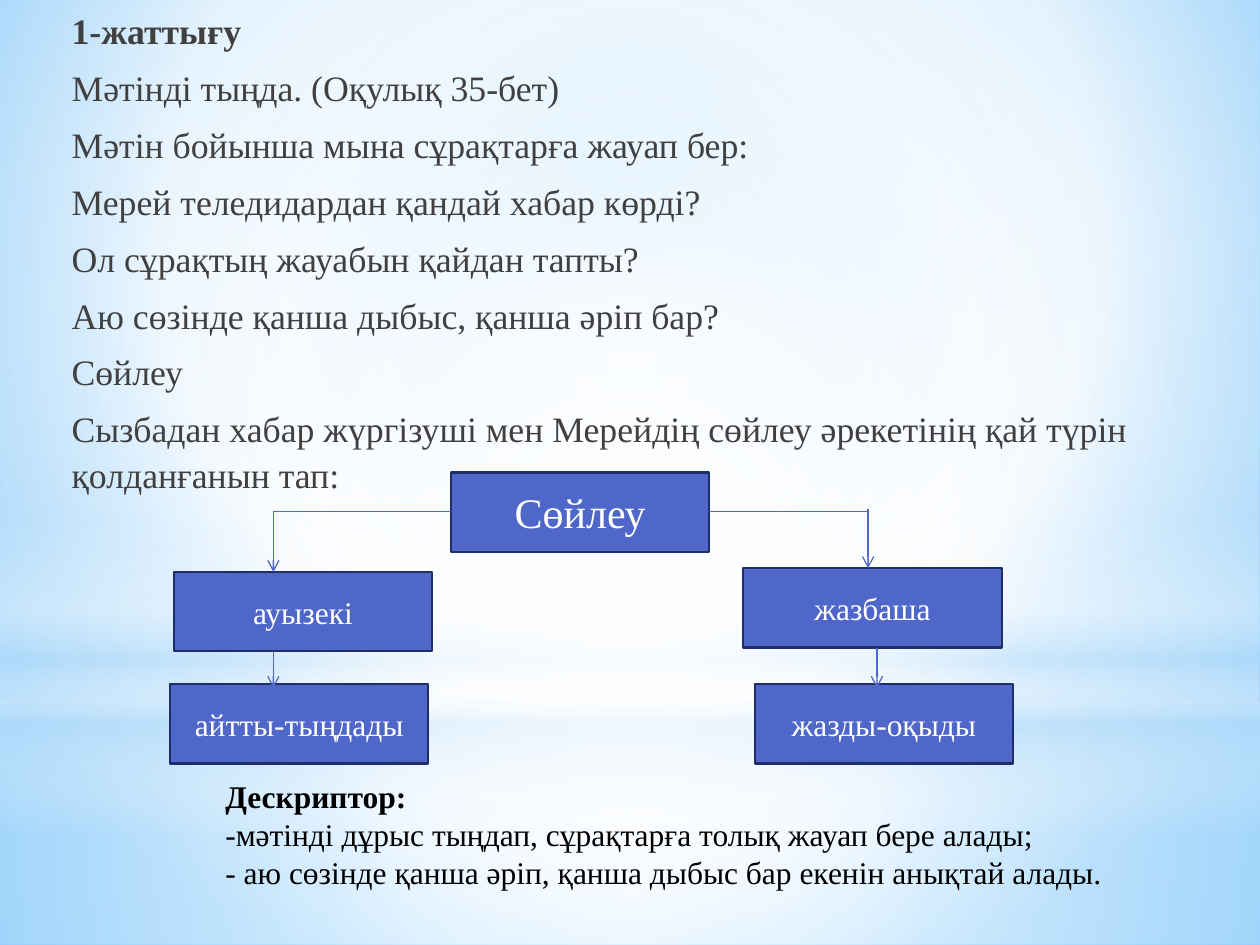
from lxml import etree
from pptx import Presentation
from pptx import util as u
from pptx.dml.color import RGBColor
from pptx.enum import shapes, text
from pptx.oxml import ns

FONT = "Times New Roman"
BLUE, NAVY = "4E67C8", "1F2E69"
BOX_W, BOX_H = 2.05, 0.63

TASKS = [
    "1-жаттығу",
    "Мәтінді тыңда. (Оқулық 35-бет)",
    "Мәтін бойынша мына сұрақтарға жауап бер:",
    "Мерей теледидардан қандай хабар көрді?",
    "Ол сұрақтың жауабын қайдан тапты?",
    "Аю сөзінде қанша дыбыс, қанша әріп бар?",
    "Сөйлеу",
    "Сызбадан хабар жүргізуші мен Мерейдің сөйлеу әрекетінің қай түрін қолданғанын тап:",
]
DESCRIPTOR = [
    "Дескриптор:",
    "-мәтінді дұрыс тыңдап, сұрақтарға толық жауап бере алады;",
    "- аю сөзінде қанша әріп, қанша дыбыс бар екенін анықтай алады.",
]


def color(value):
    return RGBColor.from_string(value)


def sub(parent, tag, **attrs):
    el = etree.SubElement(parent, ns.qn(tag))
    for key, value in attrs.items():
        el.set(key, str(value))
    return el


def set_gradient(owner, stops, center=None):
    solid = owner.find(".//" + ns.qn("a:solidFill"))
    grad = etree.Element(ns.qn("a:gradFill"), rotWithShape="1")
    stop_list = sub(grad, "a:gsLst")
    for pos, value, alpha in stops:
        stop = sub(stop_list, "a:gs", pos=pos * 1000)
        clr = sub(stop, "a:srgbClr", val=value)
        if alpha < 100:
            sub(clr, "a:alpha", val=alpha * 1000)
    if center:
        circle = sub(grad, "a:path", path="circle")
        sub(circle, "a:fillToRect", **{k: v * 1000 for k, v in zip("ltrb", center)})
    else:
        sub(grad, "a:lin", ang=5400000, scaled=0)
    solid.getparent().replace(solid, grad)


def add_glow(s, kind, y, h, stops, center=None):
    sp = s.shapes.add_shape(kind, 0, u.Inches(y), u.Inches(10), u.Inches(h))
    sp.shadow.inherit = False
    sp.line.fill.background()
    sp.fill.solid()
    set_gradient(sp._element.spPr, stops, center)


def add_backdrop(s):
    s.background.fill.solid()
    set_gradient(s.background._cSld, [(0, "9ED5FF", 100), (60, "FFFFFF", 100), (100, "5BB9FF", 100)],
                 (20, 10, 20, 60))
    rect, oval = shapes.MSO_SHAPE.RECTANGLE, shapes.MSO_SHAPE.OVAL
    middle = (50, 50, 50, 50)
    add_glow(s, rect, 5.58, 1.92, [(0, "FFFFFF", 91), (37, "FFFFFF", 76), (100, "B4DCFA", 79)], middle)
    add_glow(s, rect, 0, 5.58, [(0, "FFFFFF", 89), (48, "FFFFFF", 62), (100, "B4DCFA", 79)], middle)
    add_glow(s, rect, 4.12, 2.5, [(0, "FFFFFF", 0), (29, "FFFFFF", 30), (45, "B4DCFA", 40),
                                  (55, "FFFFFF", 26), (65, "B4DCFA", 60), (100, "FFFFFF", 0)])
    add_glow(s, oval, 1.75, 5.58, [(0, "FFFFFF", 100), (56, "FFFFFF", 0)], middle)


def add_lines(s, box, lines, size, value, indent=0, spacing=1.0, after=0):
    tf = s.shapes.add_textbox(*map(u.Inches, box)).text_frame
    tf.word_wrap = True
    for i, line in enumerate(lines):
        p = tf.paragraphs[0] if i == 0 else tf.add_paragraph()
        p.text = line
        p._p.get_or_add_pPr().set("marL", str(u.Inches(indent)))
        p.line_spacing = spacing
        p.space_after = u.Pt(after)
        p.font.name, p.font.size, p.font.bold = FONT, u.Pt(size), i == 0
        p.font.color.rgb = color(value)


def add_node(s, x, y, label, size=18):
    sp = s.shapes.add_shape(shapes.MSO_SHAPE.RECTANGLE, *map(u.Inches, (x, y, BOX_W, BOX_H)))
    sp.shadow.inherit = False
    sp.fill.solid()
    sp.fill.fore_color.rgb = color(BLUE)
    sp.line.color.rgb = color(NAVY)
    sp.line.width = u.Pt(1.25)
    tf = sp.text_frame
    tf.word_wrap = True
    tf.vertical_anchor = text.MSO_ANCHOR.MIDDLE
    p = tf.paragraphs[0]
    p.text = label
    p.alignment = text.PP_ALIGN.CENTER
    p.font.name, p.font.size = FONT, u.Pt(size)
    p.font.color.rgb = color("FFFFFF")


def add_link(s, x1, y1, x2, y2, arrow=True):
    link = s.shapes.add_connector(shapes.MSO_CONNECTOR.STRAIGHT, *map(u.Inches, (x1, y1, x2, y2)))
    link.line.color.rgb = color(BLUE)
    link.line.width = u.Pt(0.75)
    if arrow:
        sub(link.line._get_or_add_ln(), "a:tailEnd", type="arrow")
    sub(link._element.spPr, "a:effectLst")


def add_speech_tree(s, x, y):
    add_node(s, x + 2.23, y, "Сөйлеу", 24)
    for dx, dy, label in [(0.03, 0.79, "ауызекі"), (0, 1.68, "айтты-тыңдады"),
                          (4.55, 0.76, "жазбаша"), (4.64, 1.68, "жазды-оқыды")]:
        add_node(s, x + dx, y + dy, label)
    for start, turn, top, kind_y, low_x in [(2.23, 0.82, 0.31, 0.79, 0.82),
                                            (2.23 + BOX_W, 5.54, 0.29, 0.76, 5.61)]:
        add_link(s, x + start, y + 0.31, x + turn, y + 0.31, arrow=False)
        add_link(s, x + turn, y + top, x + turn, y + kind_y)
        add_link(s, x + low_x, y + kind_y + BOX_H, x + low_x, y + 1.71)


def main():
    prs = Presentation()
    prs.slide_width, prs.slide_height = u.Inches(10), u.Inches(7.5)
    s = prs.slides.add_slide(prs.slide_layouts[6])
    add_backdrop(s)
    add_lines(s, (0.42, 0, 8.99, 3.8), TASKS, 20.4, "404040", indent=0.05, spacing=1.07, after=6.3)
    add_speech_tree(s, 1.35, 3.75)
    add_lines(s, (1.69, 6.12, 7.95, 1.01), DESCRIPTOR, 18, "000000")
    prs.save("out.pptx")


if __name__ == "__main__":
    main()
